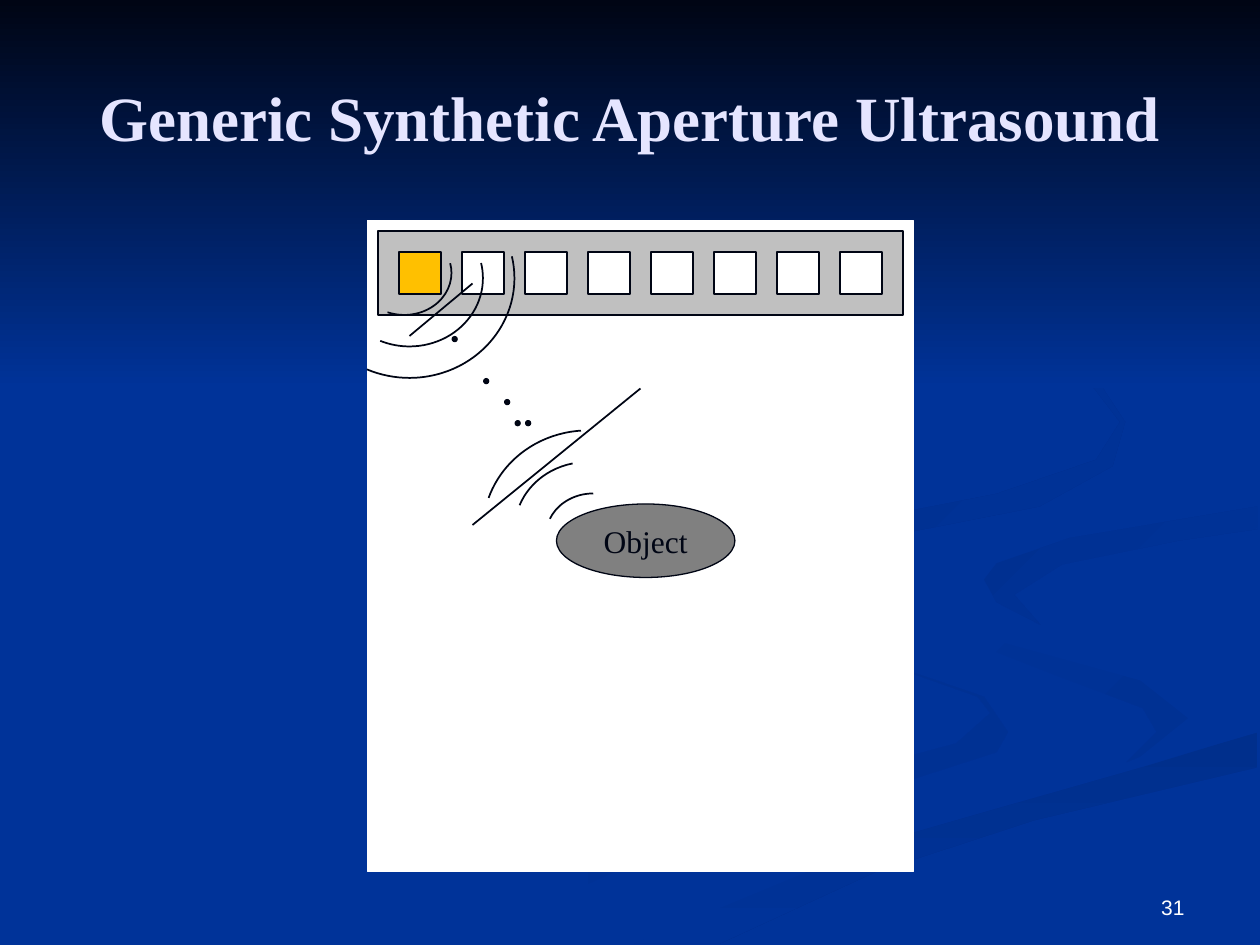
from lxml import etree
from pptx import Presentation
from pptx import util as u
from pptx.dml.color import RGBColor
from pptx.enum import shapes, text
from pptx.oxml.ns import qn

COLORS = {
    "blue": "003399", "ink": "000514", "title": "E5E5FF", "white": "FFFFFF",
    "probe": "C0C0C0", "active": "FFC000", "object": "808080",
    "swirl": "003193", "wave": "002F8C", "curl": "003091", "ribbon": "002F8E",
}
RGB = {name: RGBColor.from_string(value) for name, value in COLORS.items()}
KIND = shapes.MSO_SHAPE

prs = Presentation()
prs.slide_width, prs.slide_height = u.Inches(10), u.Inches(7.5)
COL, ROW = prs.slide_width / 120, prs.slide_height / 90
s = prs.slides.add_slide(prs.slide_layouts[5])
s.background.fill.solid()
s.background.fill.fore_color.rgb = RGB["blue"]


def put(kind, x, y, w, h, fill=None, line=None, weight=0.75):
    sp = s.shapes.add_shape(kind, int(x * COL), int(y * ROW), int(w * COL), int(h * ROW))
    sp.shadow.inherit = False
    if fill:
        sp.fill.solid()
        sp.fill.fore_color.rgb = RGB[fill]
    else:
        sp.fill.background()
    if line:
        sp.line.color.rgb = RGB[line]
        sp.line.width = u.Pt(weight)
    else:
        sp.line.fill.background()
    return sp


def write(sp, words, color, align, anchor, **font):
    tf = sp.text_frame
    tf.word_wrap = True
    tf.auto_size = text.MSO_AUTO_SIZE.NONE
    tf.vertical_anchor = anchor
    p = tf.paragraphs[0]
    p.alignment = align
    r = p.add_run()
    r.text = words
    r.font.color.rgb = RGB[color]
    for name, value in font.items():
        setattr(r.font, name, value)


swirls = [
    ("blue", "swirl", 0, [
        (781, 553), (682, 519), (594, 485), (575, 459), (581, 484), (697, 525),
        (776, 553), (786, 566), (759, 590), (539, 649), (300, 749), (361, 749),
        (499, 687), (676, 634), (791, 597), (800, 581)]),
    ("blue", "swirl", 45, [
        (943, 570), (905, 540), (792, 509), (733, 483), (724, 464), (746, 500),
        (838, 536), (907, 562), (918, 581), (894, 605), (932, 589)]),
    ("wave", "blue", 90, [
        (503, 749), (571, 749), (695, 692), (821, 651), (998, 609), (998, 581),
        (903, 610), (696, 669), (569, 719)]),
    ("blue", "blue", 0, [
        (725, 464), (793, 509), (905, 540), (943, 570), (902, 603), (663, 668),
        (477, 749), (503, 749), (696, 669), (999, 581), (999, 538), (832, 498),
        (781, 463), (850, 427), (999, 402), (999, 387), (770, 427)]),
    ("curl", "blue", 45, [
        (781, 460), (791, 478), (826, 496), (805, 472), (843, 448), (936, 429),
        (998, 420), (998, 402), (849, 427), (791, 447)]),
    ("ribbon", "blue", 45, [
        (683, 430), (825, 402), (883, 370), (893, 335), (864, 291), (762, 233),
        (846, 279), (889, 335), (870, 365), (791, 392), (637, 422), (580, 451),
        (580, 474), (622, 500), (593, 470), (614, 448)]),
]
gradients = []
for start, end, angle, points in swirls:
    fb = s.shapes.build_freeform(*points[0], scale=u.Inches(0.01))
    fb.add_line_segments(points[1:], close=True)
    sp = fb.convert_to_shape()
    sp.shadow.inherit = False
    sp.line.fill.background()
    gradients.append((sp, start, end, angle))
gradients.append((put(KIND.RECTANGLE, 0, 0, 120, 37), "ink", "blue", 90))
for sp, start, end, angle in gradients:
    sp.fill.gradient()
    sp.fill.gradient_angle = (360 - angle) % 360
    for stop, color in zip(sp.fill.gradient_stops, (start, end)):
        stop.color.rgb = RGB[color]

title = s.shapes.title
title.element.getparent().append(title.element)
for name, value in {"left": 6 * COL, "top": 3.6 * ROW,
                    "width": 108 * COL, "height": 15 * ROW}.items():
    setattr(title, name, int(value))
write(title, "Generic Synthetic Aperture Ultrasound", "title", text.PP_ALIGN.CENTER,
      text.MSO_ANCHOR.MIDDLE, name="Times New Roman", size=u.Pt(36), bold=True)

put(KIND.RECTANGLE, 35, 21, 52, 62, "white", "white")
put(KIND.RECTANGLE, 36, 22, 50, 8, "probe", "ink")
for i in range(8):
    put(KIND.RECTANGLE, 38 + 6 * i, 24, 4, 4, "white" if i else "active", "ink")
target = put(KIND.OVAL, 53, 48, 17, 7, "object", "ink")
write(target, "Object", "ink", text.PP_ALIGN.CENTER, text.MSO_ANCHOR.MIDDLE,
      name="Times New Roman", size=u.Pt(18))

sizes = [(9, 8), (14, 13), (20, 19)]
wavefronts = [
    (39, 26.5, -0.5, [(348, 113), (348, 115), (348, 115)]),
    (56, 50.5, 0.5, [(201, 270), (200, 257), (198, 266)]),
]
for x, y, inner_shift, sweeps in wavefronts:
    for (w, h), sweep in zip(sizes, sweeps):
        shift = inner_shift if w == 9 else 0
        sp = put(KIND.ARC, x + shift - w / 2, y + shift - h / 2, w, h, None, "ink", 1)
        for i, angle in enumerate(sweep):
            sp.adjustments[i] = angle * 0.6

for x1, y1, x2, y2 in [(61, 37, 45, 50), (39, 32, 45, 27)]:
    line = s.shapes.add_connector(shapes.MSO_CONNECTOR.STRAIGHT, int(x1 * COL),
                                  int(y1 * ROW), int(x2 * COL), int(y2 * ROW))
    line.line.color.rgb = RGB["ink"]
    line.line.width = u.Pt(1)
    etree.SubElement(line.element.spPr, qn("a:effectLst"))

for x, y in [(43, 32), (46, 36), (48, 38), (49, 40), (50, 40)]:
    put(KIND.OVAL, x, y, 0.6, 0.6, "ink")

number = s.shapes.add_textbox(int(86 * COL), int(82 * ROW), int(28 * COL), int(6.2 * ROW))
write(number, "31", "white", text.PP_ALIGN.RIGHT, text.MSO_ANCHOR.BOTTOM,
      name="Arial", size=u.Pt(12))

prs.save("out.pptx")
